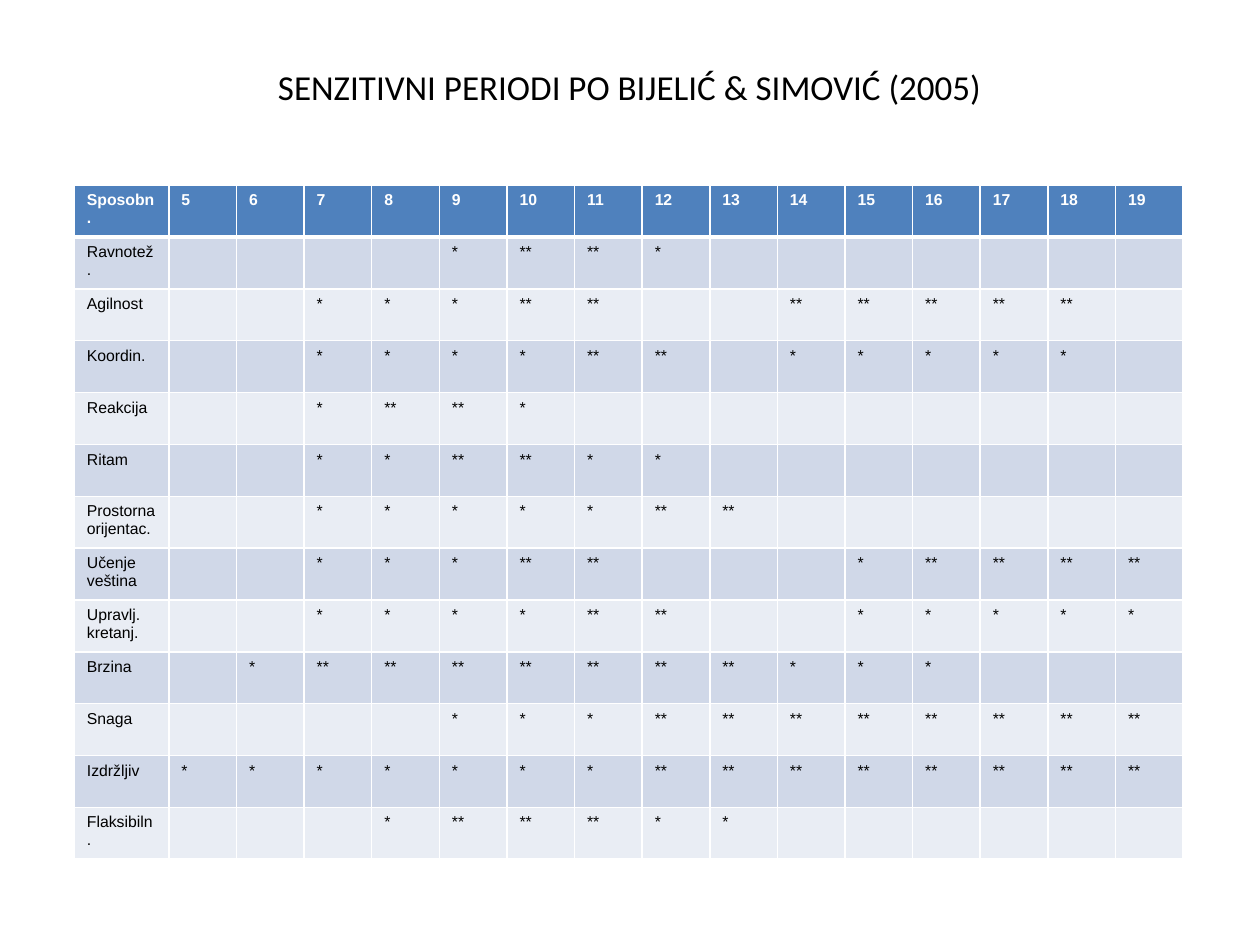
from lxml import etree
from pptx import Presentation
from pptx.dml.color import RGBColor
from pptx.enum import text
from pptx.oxml.ns import qn
from pptx.util import Inches, Pt

AGES = range(5, 20)
# One digit per age: the number of stars in that cell.
SENSITIVITY = {
    "Ravnotež.": "000012210000000",
    "Agilnost": "001112200222220",
    "Koordin.": "001111220111110",
    "Reakcija": "001221000000000",
    "Ritam": "001122110000000",
    "Prostorna\norijentac.": "001111122000000",
    "Učenje veština": "001112200012222",
    "Upravlj. kretanj.": "001111220011111",
    "Brzina": "012222222111000",
    "Snaga": "000011122222222",
    "Izdržljiv": "111111122222222",
    "Flaksibiln.": "000122211000000",
}
HEADER_FILL = "4F81BD"
BAND_FILLS = ("D0D8E8", "E9EDF4")
WHITE, BLACK = "FFFFFF", "000000"


def rgb(color):
    return RGBColor.from_string(color)


def style_font(paragraph, name, size, color, bold=False):
    font = paragraph.font
    font.name, font.size, font.bold = name, Pt(size), bold
    font.color.rgb = rgb(color)


def add_title(slide, wording):
    frame = slide.shapes.add_textbox(
        Inches(0.5), Inches(0.3), Inches(9), Inches(0.77)).text_frame
    frame.word_wrap = True
    frame.vertical_anchor = text.MSO_ANCHOR.MIDDLE
    heading = frame.paragraphs[0]
    heading.text = wording
    heading.alignment = text.PP_ALIGN.CENTER
    style_font(heading, "Calibri", 20, BLACK)


def add_borders(cell, top, bottom):
    """Draw white cell borders; must run before the fill is set."""
    properties = cell._tc.get_or_add_tcPr()
    for side, width in (("L", 1), ("R", 1), ("T", top), ("B", bottom)):
        line = etree.SubElement(properties, qn(f"a:ln{side}"), w=str(Pt(width)))
        solid = etree.SubElement(line, qn("a:solidFill"))
        etree.SubElement(solid, qn("a:srgbClr"), val=WHITE)


def fill_row(table, row, wordings):
    is_header = row == 0
    fill = HEADER_FILL if is_header else BAND_FILLS[(row - 1) % 2]
    for column, wording in enumerate(wordings):
        cell = table.cell(row, column)
        add_borders(cell, top=3 if row == 1 else 1, bottom=3 if is_header else 1)
        cell.fill.solid()
        cell.fill.fore_color.rgb = rgb(fill)
        cell.text = wording
        for paragraph in cell.text_frame.paragraphs:
            style_font(paragraph, "Arial", 9, WHITE if is_header else BLACK, is_header)


def add_sensitivity_table(slide):
    rows = [["Sposobn.", *map(str, AGES)]]
    rows += [[ability, *("*" * int(stars) for stars in levels)]
             for ability, levels in SENSITIVITY.items()]
    width, height, label_width = 8.8, 5.35, 0.75
    table = slide.shapes.add_table(
        len(rows), len(rows[0]), Inches(0.59), Inches(1.47),
        Inches(width), Inches(height)).table
    for column in table.columns:
        column.width = Inches((width - label_width) / len(AGES))
    table.columns[0].width = Inches(label_width)
    for index, wordings in enumerate(rows):
        table.rows[index].height = Inches(height / len(rows))
        fill_row(table, index, wordings)


def main():
    deck = Presentation()
    deck.slide_width, deck.slide_height = Inches(10), Inches(7.5)
    slide = deck.slides.add_slide(deck.slide_layouts[6])
    add_title(slide, "SENZITIVNI PERIODI PO BIJELIĆ & SIMOVIĆ (2005)")
    add_sensitivity_table(slide)
    deck.save("out.pptx")


if __name__ == "__main__":
    main()
